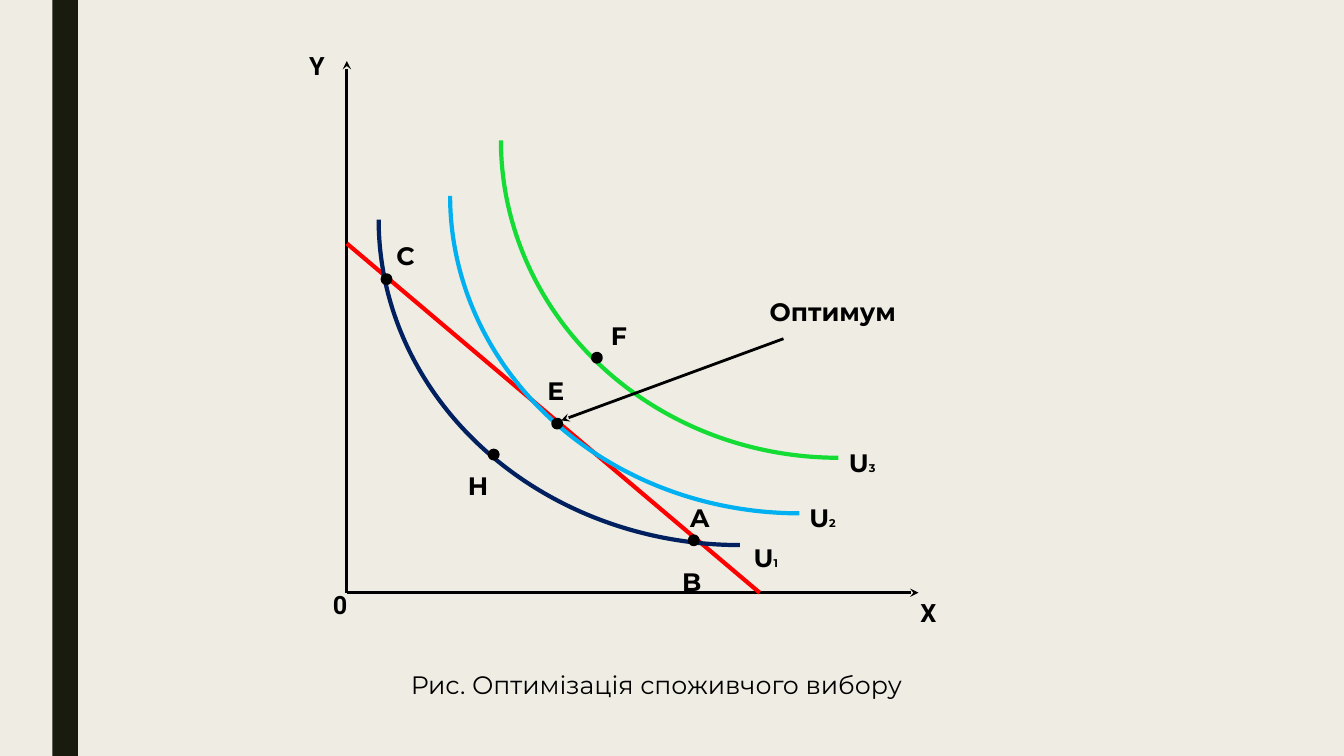
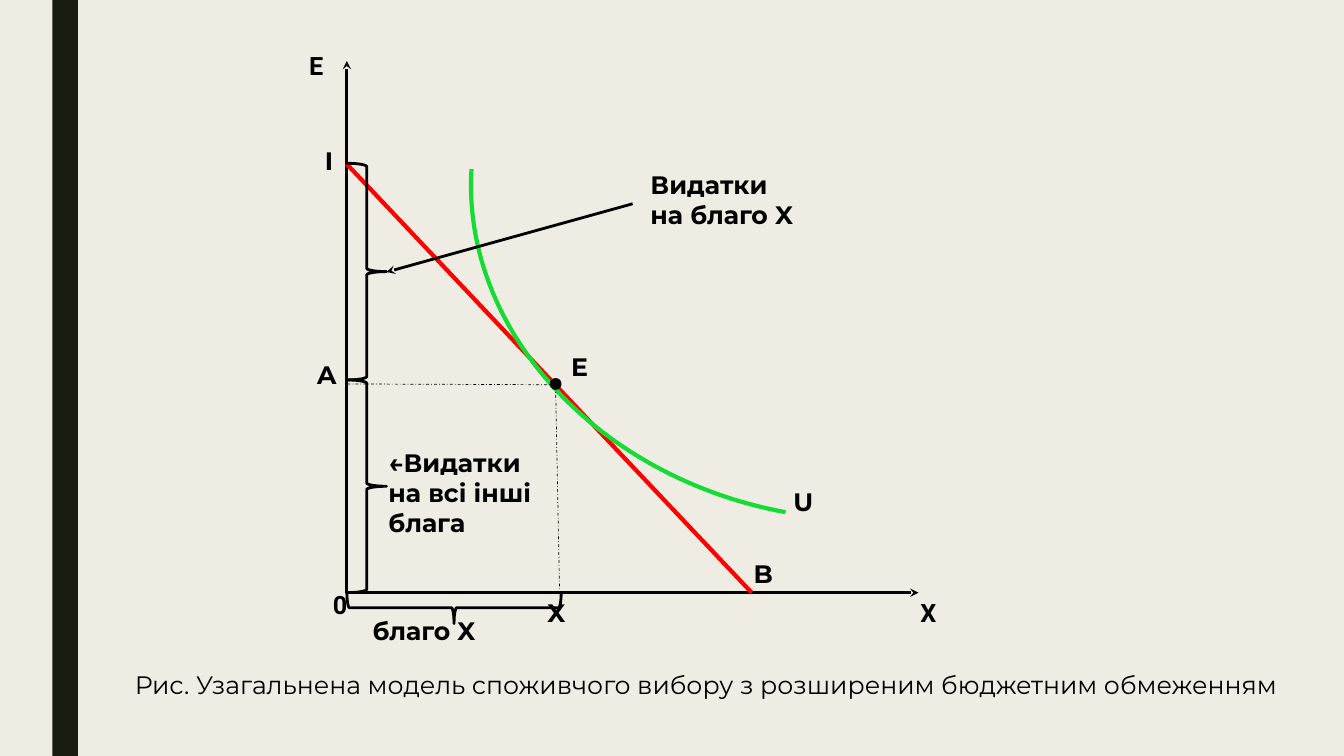
from lxml import etree
from pptx import Presentation
from pptx.dml.color import RGBColor
from pptx.enum.dml import MSO_LINE
from pptx.enum.shapes import MSO_CONNECTOR, MSO_SHAPE
from pptx.enum.text import MSO_ANCHOR, MSO_AUTO_SIZE, PP_ALIGN
from pptx.oxml.ns import qn
from pptx.util import Cm, Inches, Pt

ARC, BRACE = MSO_SHAPE.ARC, MSO_SHAPE.RIGHT_BRACE
DOT, BAND = MSO_SHAPE.OVAL, MSO_SHAPE.RECTANGLE
LINE = MSO_CONNECTOR.STRAIGHT
DASH = MSO_LINE.DASH_DOT
TOP, MID = MSO_ANCHOR.TOP, PP_ALIGN.CENTER
GROW = MSO_AUTO_SIZE.SHAPE_TO_FIT_TEXT

PAPER = RGBColor(0xEF, 0xED, 0xE3)
DARK = RGBColor(0x19, 0x1B, 0x0E)
BLACK = RGBColor(0x00, 0x00, 0x00)
RED = RGBColor(0xFF, 0x00, 0x00)
NAVY = RGBColor(0x00, 0x20, 0x60)
GREEN = RGBColor(0x14, 0xDC, 0x35)
SKY = RGBColor(0x00, 0xB0, 0xF0)
BODY, AXIS = "Montserrat", "Roboto"

# Graph grid: columns run right and rows run up from the origin of the axes.
CELL = Cm(0.2)
LEFT, BASE = Inches(3.44), Inches(5.88)

deck = Presentation()
deck.slide_width, deck.slide_height = Inches(13.33), Inches(7.5)
WIDE, HIGH = deck.slide_width, deck.slide_height


def link(page, start, end, tint=BLACK, width=2, tip=False, dash=None):
    """Draw a line between two grid points, with an arrowhead at the end if tip."""
    (x1, y1), (x2, y2) = start, end
    line = page.shapes.add_connector(
        LINE, int(LEFT + x1 * CELL), int(BASE - y1 * CELL),
        int(LEFT + x2 * CELL), int(BASE - y2 * CELL))
    line.line.color.rgb = tint
    line.line.width = Pt(width)
    if dash:
        line.line.dash_style = dash
    props = line.element.spPr
    if tip:
        etree.SubElement(props.find(qn("a:ln")), qn("a:tailEnd"), type="stealth")
    etree.SubElement(props, qn("a:effectLst"))


def form(page, kind, box, tint=BLACK, width=2, turn=0):
    """Draw an unfilled outline; box is column, top row, columns, rows."""
    col, row, cols, rows = box
    shape = page.shapes.add_shape(
        kind, int(LEFT + col * CELL), int(BASE - row * CELL),
        int(cols * CELL), int(rows * CELL))
    shape.shadow.inherit = False
    shape.fill.background()
    shape.line.color.rgb = tint
    shape.line.width = Pt(width)
    shape.rotation = turn
    return shape


# Caption, its column and columns, name of the upright axis, dots,
# labels: text, index, column, top row, columns
plans = [
    ("Рис. Оптимізація споживчого вибору", -7, 92, "Y",
     [(5, 39.5), (43.7, 6.6), (18.5, 17.4), (26.5, 21.3), (31.5, 29.6)],
     [("B", "", 41, 4, 4), ("C", "", 5, 45, 5), ("A", "", 42, 12, 5),
      ("E", "", 24, 28, 6), ("F", "", 32, 35, 5), ("H", "", 14, 16, 6),
      ("U", "1", 50, 7, 8), ("U", "2", 57, 12, 8), ("U", "3", 62, 19, 7),
      ("Оптимум", "", 52, 38, 24)]),
    ("Рис. Узагальнена модель споживчого вибору з розширеним бюджетним обмеженням",
     -32.6, 155.7, "E",
     [(26.3, 26.3)],
     [("B", "", 50, 5, 5), ("U", "", 55, 14, 7), ("E", "", 27, 31, 3),
      ("A", "", -5, 30, 7), ("X", "", 24, 0, 5), ("I", "", -4, 57, 6),
      ("←Видатки на всі інші блага", "", 4, 19, 22),
      ("Видатки на благо X", "", 37, 54, 22),
      ("благо X", "", 2, -2.2, 22)]),
]
pages = [deck.slides.add_slide(deck.slide_layouts[5]) for _ in plans]
first, last = pages

# Shared background and side band
master = deck.slide_master
master.background.fill.solid()
master.background.fill.fore_color.rgb = PAPER
band = first.shapes.add_shape(BAND, int(WIDE * 0.039), 0, int(WIDE * 0.019), HIGH)
band.shadow.inherit = False
band.fill.solid()
band.fill.fore_color.rgb = DARK
band.line.fill.background()
master.shapes.element.insert(2, band.element)

# Axes
for page in pages:
    link(page, (0, 0), (0, 67), tip=True)
    link(page, (0, 0), (72, 0), tip=True)

# Consumer's choice: budget line, three curves, arrow to the optimum
link(first, (0, 44), (52, 0), RED, 3)
for box, tint in [((4, 88, 91, 82), NAVY), ((19.4, 97, 85, 80), GREEN),
                  ((13, 90, 88, 80), SKY)]:
    form(first, ARC, box, tint, 3, 180)
link(first, (55, 32), (27, 21.7), tip=True)

# Wider budget: budget line, curve, guides, braces, arrow to the upper brace
link(last, (0, 54), (51, 0), RED, 3)
curve = form(last, ARC, (15.4, 88.1, 93.9, 78.6), GREEN, 3, 190.4)
curve.adjustments[0], curve.adjustments[1] = 162, 213.12
link(last, (26.2, 26.2), (0, 26.3), width=0.5, dash=DASH)
link(last, (26.3, 25.9), (26.8, 0), width=0.5, dash=DASH)
for box, turn in [((0, 26.8, 5, 26.8), 0), ((0, 54.1, 5, 27.3), 0),
                  ((11.5, 11.6, 4, 27), 90)]:
    form(last, BRACE, box, turn=turn)
link(last, (36, 49), (5, 40.4), tip=True)

# Dots, labels and captions
for page, (words, start, span, name, dots, notes) in zip(pages, plans):
    for col, row in dots:
        dot = form(page, DOT, (col - 0.5, row + 0.5, 1, 1), width=2.75)
        dot.fill.solid()
        dot.fill.fore_color.rgb = BLACK

    axes = [(name, "", -6, 69, 5), ("X", "", 71, 0, 6), ("0", "", -3, 1, 4)]
    for face, group in [(AXIS, axes), (BODY, notes)]:
        for text, index, col, row, cols in group:
            label = page.shapes.add_textbox(
                int(LEFT + col * CELL), int(BASE - row * CELL),
                int(cols * CELL), 5 * CELL)
            frame = label.text_frame
            frame.word_wrap = True
            frame.auto_size = GROW
            for part, size in [(text, 18), (index, 8)]:
                if part:
                    run = frame.paragraphs[0].add_run()
                    run.text = part
                    run.font.name = face
                    run.font.size = Pt(size)
                    run.font.bold = True
                    run.font.color.rgb = BLACK

    title = page.shapes.title
    title.left, title.top = int(LEFT + start * CELL), BASE + 9 * CELL
    title.width, title.height = int(span * CELL), 5 * CELL
    frame = title.text_frame
    frame.word_wrap = True
    frame.auto_size = GROW
    frame.vertical_anchor = TOP
    frame.paragraphs[0].alignment = MID
    run = frame.paragraphs[0].add_run()
    run.text = words
    run.font.name = BODY
    run.font.size = Pt(18)
    run.font.color.rgb = BLACK

deck.save("out.pptx")
